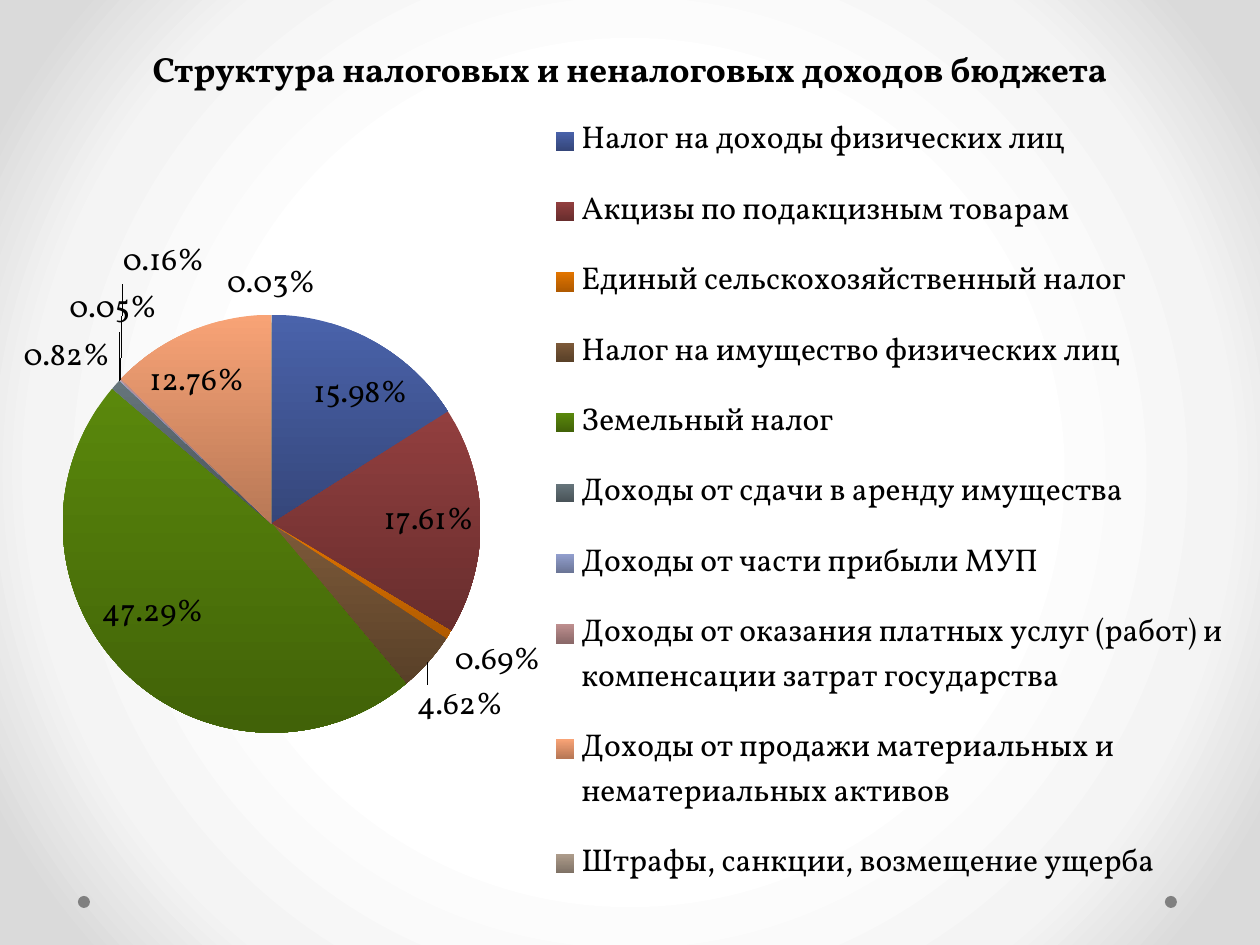
from lxml import etree
from pptx import Presentation
from pptx.chart.data import CategoryChartData
from pptx.dml.color import RGBColor
from pptx.enum.chart import XL_CHART_TYPE, XL_LABEL_POSITION, XL_LEGEND_POSITION
from pptx.enum.shapes import MSO_SHAPE
from pptx.enum.text import MSO_ANCHOR, MSO_AUTO_SIZE, PP_ALIGN
from pptx.oxml import parse_xml
from pptx.oxml.ns import qn
from pptx.util import Pt

PIE = XL_CHART_TYPE.PIE
BEST_FIT = XL_LABEL_POSITION.BEST_FIT
RIGHT = XL_LEGEND_POSITION.RIGHT
OVAL = MSO_SHAPE.OVAL
BOTTOM = MSO_ANCHOR.BOTTOM
NO_AUTOFIT = MSO_AUTO_SIZE.NONE
CENTER = PP_ALIGN.CENTER

# Content
FONT = "Vollkorn"
BLACK = "000000"
TITLE = "Структура налоговых и неналоговых доходов бюджета"
# Category, value, top and bottom colour of the slice
SLICES = [
    ("Налог на доходы физических лиц", 15.98, "4A63AB", "35467A"),
    ("Акцизы по подакцизным товарам", 17.61, "923F3F", "682D2D"),
    ("Единый сельскохозяйственный налог", 0.69, "E27500", "B05A00"),
    ("Налог на имущество физических лиц", 4.62, "7D5A39", "594028"),
    ("Земельный налог", 47.29, "5A880C", "416208"),
    ("Доходы от сдачи в аренду имущества", 0.82, "66757B", "495358"),
    ("Доходы от части прибыли МУП", 0.05, "929FCE", "6B7596"),
    ("Доходы от оказания платных услуг (работ) и компенсации затрат государства",
     0.16, "BE8F8F", "8A6868"),
    ("Доходы от продажи материальных и нематериальных активов",
     12.76, "F8A376", "B87856"),
    ("Штрафы, санкции, возмещение ущерба", 0.03, "AD9C8B", "7E7165"),
]
BACKGROUND_STOPS = [(50, "FFFFFF"), (76, "F4F4F4"), (92, "DADADA")]

# Geometry in px; layouts are fractions of the chart
SCALE = 914400 // 126
TITLE_BOX = (63, 0, 1134, 96)
CHART_BOX = (0, 76, 1235, 853)
DOTS_LEFT = (78, 1165)
DOT_TOP, DOT_SIZE = 896, 12
PLOT_LAYOUT = (0, 0.28, 0.44, 0.49)
LEGEND_LAYOUT = (0.44, 0.02, 0.56, 0.96)


def emu(*lengths):
    return [length * SCALE for length in lengths]


def color(value):
    return RGBColor.from_string(value)


def format_font(font, size, bold=False, fill=BLACK):
    font.name = FONT
    font.size = Pt(size)
    font.bold = bold
    font.color.rgb = color(fill)


def write_text(shape, text, size, bold=False, align=CENTER, line_spacing=None):
    paragraph = shape.text_frame.paragraphs[0]
    paragraph.alignment = align
    paragraph.line_spacing = line_spacing
    run = paragraph.add_run()
    run.text = text
    format_font(run.font, size, bold)


def set_background(slide):
    fill = slide.background.fill
    fill.gradient()
    gradient = slide.element.find(".//" + qn("a:gradFill"))
    for child in list(gradient):
        gradient.remove(child)
    stops = etree.SubElement(gradient, qn("a:gsLst"))
    for position, value in BACKGROUND_STOPS:
        stop = etree.SubElement(stops, qn("a:gs"), pos=str(position * 1000))
        etree.SubElement(stop, qn("a:srgbClr"), val=value)
    circle = etree.SubElement(gradient, qn("a:path"), {"path": "circle"})
    etree.SubElement(circle, qn("a:fillToRect"), dict.fromkeys("ltrb", "50000"))


def manual_layout(box, inner=False):
    x, y, width, height = box
    target = '<c:layoutTarget val="inner"/>' if inner else ""
    return parse_xml(
        '<c:layout xmlns:c="http://schemas.openxmlformats.org/drawingml/2006/chart">'
        f'<c:manualLayout>{target}<c:xMode val="edge"/><c:yMode val="edge"/>'
        f'<c:x val="{x}"/><c:y val="{y}"/><c:w val="{width}"/><c:h val="{height}"/>'
        "</c:manualLayout></c:layout>")


def place(element, layout, index):
    for old in element.findall(qn("c:layout")):
        element.remove(old)
    element.insert(index, layout)


def add_pie(slide):
    data = CategoryChartData()
    data.categories = [name for name, *_ in SLICES]
    data.add_series("Series 1", [value for _, value, *_ in SLICES])
    chart = slide.shapes.add_chart(PIE, *emu(*CHART_BOX), data).chart
    chart.has_title = False
    format_font(chart.font, 18)

    # Legend and plot area
    chart.has_legend = True
    chart.legend.position = RIGHT
    chart.legend.include_in_layout = False
    format_font(chart.legend.font, 18)
    legend = chart.legend._element
    place(legend, manual_layout(LEGEND_LAYOUT), 1)
    plot = chart.plots[0]
    place(plot._element.getparent(), manual_layout(PLOT_LAYOUT, inner=True), 0)

    # Slices
    plot.vary_by_categories = True
    for index, (_, _, top, bottom) in enumerate(SLICES):
        fill = plot.series[0].points[index].format.fill
        fill.gradient()
        fill.gradient_angle = 270
        for stop, value in zip(fill.gradient_stops, (top, bottom)):
            stop.color.rgb = color(value)

    # Percent labels
    labels = plot.series[0].data_labels
    labels.show_value = False
    labels.show_percentage = True
    labels.number_format = "0.00%"
    labels.number_format_is_linked = False
    labels.position = BEST_FIT
    format_font(labels.font, 18)


def main():
    presentation = Presentation()
    presentation.slide_width, presentation.slide_height = emu(1260, 945)
    slide = presentation.slides.add_slide(presentation.slide_layouts[5])
    set_background(slide)

    # Corner dots
    for left in DOTS_LEFT:
        dot = slide.shapes.add_shape(OVAL, *emu(left, DOT_TOP, DOT_SIZE, DOT_SIZE))
        dot.shadow.inherit = False
        dot.fill.solid()
        dot.fill.fore_color.rgb = color("808080")
        dot.line.fill.background()

    # Title
    title = slide.shapes.title
    title.left, title.top, title.width, title.height = emu(*TITLE_BOX)
    title.text_frame.vertical_anchor = BOTTOM
    title.text_frame.auto_size = NO_AUTOFIT
    write_text(title, TITLE, 20, bold=True, line_spacing=Pt(58))

    add_pie(slide)
    presentation.save("out.pptx")


if __name__ == "__main__":
    main()
